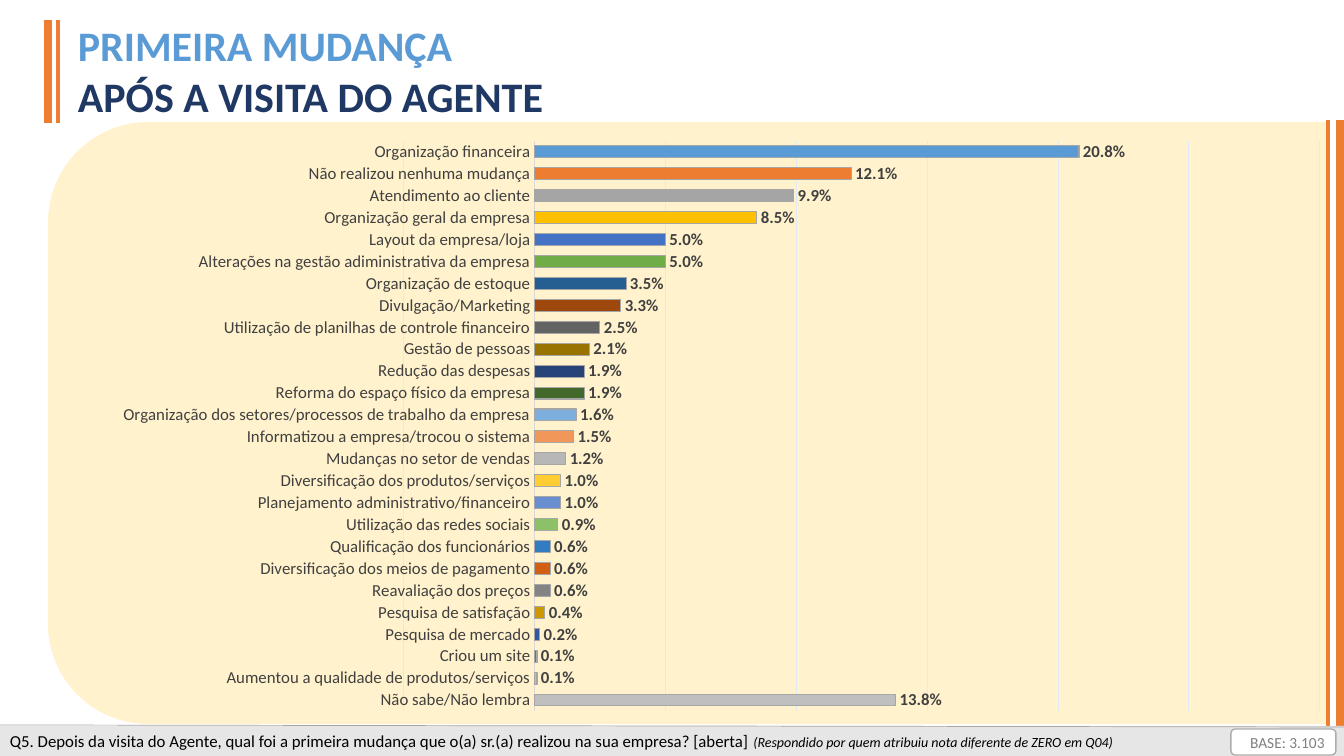
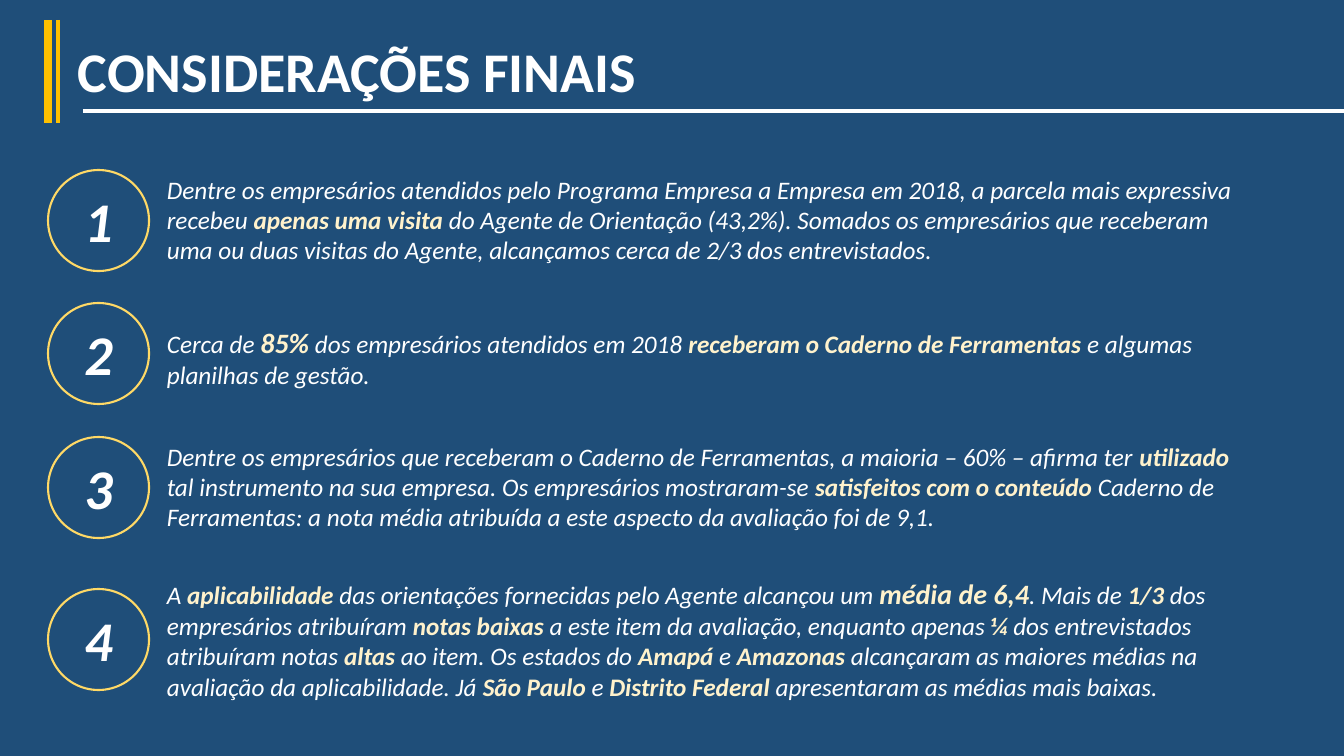
from lxml import etree
from pptx import Presentation, util as u
from pptx.chart.data import CategoryChartData
from pptx.dml.color import RGBColor
from pptx.enum import chart as ch, shapes, text
from pptx.oxml import parse_xml
from pptx.oxml.ns import nsdecls, qn

W, H = 1344, 756
PX = 12192000 / W
FONT = "Calibri"
C = {
    "white": "FFFFFF", "black": "000000", "orange": "ED7D31", "gold": "FFC000",
    "blue": "5B9BD5", "navy": "203864", "deep": "1F4E79", "cream": "FFF2CC",
    "ring": "FFD966", "bar_line": "A6A6A6", "footer": "E7E6E6", "base_line": "AFABAB",
    "base_text": "808080", "chart_text": "404040", "axis": "D9D9D9", "grid": "DEEBF7",
}
C = {name: RGBColor.from_string(value) for name, value in C.items()}


def line(s, x1, y1, x2, y2, color, width):
    cn = s.shapes.add_connector(shapes.MSO_CONNECTOR.STRAIGHT,
                                *(int(v * PX) for v in (x1, y1, x2, y2)))
    cn.line.color.rgb = C[color]
    cn.line.width = u.Pt(width)
    etree.SubElement(cn._element.spPr, qn("a:effectLst"))


def box(s, kind, frame, fill=None, outline=None, width=1):
    """Add a preset shape, or a text box when kind is None."""
    frame = [int(v * PX) for v in frame]
    if kind is None:
        sp = s.shapes.add_textbox(*frame)
    else:
        sp = s.shapes.add_shape(kind, *frame)
        sp.shadow.inherit = False
    if fill:
        sp.fill.solid()
        sp.fill.fore_color.rgb = C[fill]
    else:
        sp.fill.background()
    if outline:
        sp.line.color.rgb = C[outline]
        sp.line.width = u.Pt(width)
    else:
        sp.line.fill.background()
    sp.text_frame.word_wrap = True
    return sp


prs = Presentation()
prs.slide_width, prs.slide_height = int(W * PX), int(H * PX)

# Shared: background, twin accent bars and title
headers = [
    ("white", "orange", (68, 15, 900, 112), 30,
     [("PRIMEIRA MUDANÇA", "blue"), ("APÓS A VISITA DO AGENTE", "navy")]),
    ("deep", "gold", (68, 32, 860, 78), 40, [("CONSIDERAÇÕES FINAIS", "white")]),
]
for bg, accent, frame, size, title in headers:
    s = prs.slides.add_slide(prs.slide_layouts[6])
    s.background.fill.solid()
    s.background.fill.fore_color.rgb = C[bg]
    for x, width in ((48, 6), (58, 3)):
        line(s, x, 20, x, 123, accent, width)
    tf = box(s, None, frame).text_frame
    for i, (words, color) in enumerate(title):
        p = tf.add_paragraph() if i else tf.paragraphs[0]
        p.text = words
        p.font.name, p.font.size, p.font.bold = FONT, u.Pt(size), True
        p.font.color.rgb = C[color]
chart_slide, closing_slide = prs.slides

# Slide 1: panel and chart
s = chart_slide
panel = box(s, shapes.MSO_SHAPE.ROUND_2_SAME_RECTANGLE, (387, -217, 602, 1280), "cream")
panel.rotation = 270

answers = [
    ("Organização financeira", 0.208, "5B9BD5"),
    ("Não realizou nenhuma mudança", 0.121, "ED7D31"),
    ("Atendimento ao cliente", 0.099, "A5A5A5"),
    ("Organização geral da empresa", 0.085, "FFC000"),
    ("Layout da empresa/loja", 0.05, "4472C4"),
    ("Alterações na gestão adiministrativa da empresa", 0.05, "70AD47"),
    ("Organização de estoque", 0.035, "255E91"),
    ("Divulgação/Marketing", 0.033, "9E480E"),
    ("Utilização de planilhas de controle financeiro", 0.025, "636363"),
    ("Gestão de pessoas", 0.021, "997300"),
    ("Redução das despesas", 0.019, "264478"),
    ("Reforma do espaço físico da empresa", 0.019, "43682B"),
    ("Organização dos setores/processos de trabalho da empresa", 0.016, "7CAFDD"),
    ("Informatizou a empresa/trocou o sistema", 0.015, "F1975A"),
    ("Mudanças no setor de vendas", 0.012, "B7B7B7"),
    ("Diversificação dos produtos/serviços", 0.01, "FFCD33"),
    ("Planejamento administrativo/financeiro", 0.01, "698ED0"),
    ("Utilização das redes sociais", 0.009, "8CC168"),
    ("Qualificação dos funcionários", 0.006, "327DC2"),
    ("Diversificação dos meios de pagamento", 0.006, "D26012"),
    ("Reavaliação dos preços", 0.006, "848484"),
    ("Pesquisa de satisfação", 0.004, "CC9A00"),
    ("Pesquisa de mercado", 0.002, "335AA1"),
    ("Criou um site", 0.001, "5A8A39"),
    ("Aumentou a qualidade de produtos/serviços", 0.001, "9DC3E6"),
    ("Não sabe/Não lembra", 0.138, "BFBFBF"),
]
data = CategoryChartData(number_format="0.0%")
data.categories = [label for label, _, _ in answers]
data.add_series("Series 1", [value for _, value, _ in answers])
chart = s.shapes.add_chart(ch.XL_CHART_TYPE.BAR_CLUSTERED,
                           *(int(v * PX) for v in (98, 129, 1247, 594)), data).chart
chart.has_legend = chart.has_title = False
chart.font.name, chart.font.size = FONT, u.Pt(12)
chart.font.color.rgb = C["chart_text"]

cat = chart.category_axis
cat.reverse_order = True
cat.major_tick_mark = ch.XL_TICK_MARK.NONE
cat.format.line.color.rgb = C["axis"]
cat.format.line.width = u.Pt(0.75)
val = chart.value_axis
val.minimum_scale, val.maximum_scale, val.major_unit = -0.05, 0.3, 0.05
val.visible = False
val.has_major_gridlines = True
val.major_gridlines.format.line.color.rgb = C["grid"]
val.major_gridlines.format.line.width = u.Pt(0.75)

plot = chart.plots[0]
plot.gap_width = 84
plot.vary_by_categories = False
plot.has_data_labels = True
labels = plot.data_labels
labels.show_value = True
labels.number_format, labels.number_format_is_linked = "0.0%", False
labels.position = ch.XL_LABEL_POSITION.OUTSIDE_END
labels.font.name, labels.font.size, labels.font.bold = FONT, u.Pt(12), True
labels.font.color.rgb = C["chart_text"]
for i, (_, _, color) in enumerate(answers):
    bar = plot.series[0].points[i].format
    bar.fill.solid()
    bar.fill.fore_color.rgb = RGBColor.from_string(color)
    bar.line.color.rgb = C["bar_line"]
    bar.line.width = u.Pt(0.75)

# Fixed inner plot area: category names run over its negative part
area = chart._chartSpace.chart.plotArea
for old in area.findall(qn("c:layout")):
    area.remove(old)
area.insert(0, parse_xml(
    f'<c:layout {nsdecls("c")}><c:manualLayout><c:layoutTarget val="inner"/>'
    '<c:xMode val="edge"/><c:yMode val="edge"/><c:x val="0.245"/><c:y val="0.02"/>'
    '<c:w val="0.735"/><c:h val="0.96"/></c:manualLayout></c:layout>'))

# Slide 1: right-hand bars, question footer and base
for x, width in ((1340, 6), (1328, 3)):
    line(s, x, 120, x, 728, "orange", width)
p = box(s, None, (0, 726, W, 30), "footer").text_frame.paragraphs[0]
p.font.name = FONT
p.font.color.rgb = C["black"]
for words, size, italic in (
        ("Q5. Depois da visita do Agente, qual foi a primeira mudança que o(a) sr.(a) "
         "realizou na sua empresa? [aberta] ", 12, False),
        ("(Respondido por quem atribuiu nota diferente de ZERO em Q04)", 10, True)):
    r = p.add_run()
    r.text = words
    r.font.size, r.font.italic = u.Pt(size), italic
line(s, 0, 725, W, 727, "bar_line", 0.5)
tf = box(s, shapes.MSO_SHAPE.ROUNDED_RECTANGLE, (1231, 729, 105, 26),
         "white", "base_line").text_frame
tf.vertical_anchor = text.MSO_ANCHOR.MIDDLE
p = tf.paragraphs[0]
p.text = "BASE: 3.103"
p.alignment = text.PP_ALIGN.RIGHT
p.font.name, p.font.size = FONT, u.Pt(11)
p.font.color.rgb = C["base_text"]

# Slide 2: numbered remarks, with emphasis between asterisks
s = closing_slide
line(s, 83, 111, W, 111, "white", 3)
larger = ("85%", "média de 6,4")
remarks = [
    (170, 169, 102,
     "Dentre os empresários atendidos pelo Programa Empresa a Empresa em 2018, a parcela "
     "mais expressiva recebeu *apenas uma visita* do Agente de Orientação (43,2%). Somados "
     "os empresários que receberam uma ou duas visitas do Agente, alcançamos cerca de 2/3 "
     "dos entrevistados."),
    (303, 321, 75,
     "Cerca de *85%* dos empresários atendidos em 2018 *receberam o Caderno de "
     "Ferramentas *e algumas planilhas de gestão."),
    (437, 436, 102,
     "Dentre os empresários que receberam o Caderno de Ferramentas, a maioria – 60% – "
     "afirma ter *utilizado* tal instrumento na sua empresa. Os empresários mostraram-se "
     "*satisfeitos com o conteúdo *Caderno de Ferramentas: a nota média atribuída a este "
     "aspecto da avaliação foi de 9,1."),
    (589, 572, 136,
     "A *aplicabilidade* das orientações fornecidas pelo Agente alcançou um *média de "
     "6,4*. Mais de *1/3* dos empresários atribuíram *notas baixas *a este item da "
     "avaliação, enquanto apenas *¼* dos entrevistados atribuíram notas *altas* ao item. "
     "Os estados do *Amapá* e *Amazonas* alcançaram as maiores médias na avaliação da "
     "aplicabilidade. Já *São Paulo *e *Distrito Federal *apresentaram as médias mais "
     "baixas."),
]
for number, (ring_y, text_y, text_h, remark) in enumerate(remarks, 1):
    tf = box(s, shapes.MSO_SHAPE.OVAL, (48, ring_y, 101, 101), None, "ring", 1.5).text_frame
    tf.vertical_anchor = text.MSO_ANCHOR.MIDDLE
    p = tf.paragraphs[0]
    p.text = str(number)
    p.alignment = text.PP_ALIGN.CENTER
    p.font.name, p.font.size = FONT, u.Pt(40)
    p.font.bold = p.font.italic = True
    p.font.color.rgb = C["white"]

    p = box(s, None, (157, text_y, 1100, text_h)).text_frame.paragraphs[0]
    p.font.name, p.font.size, p.font.italic = FONT, u.Pt(18), True
    p.font.color.rgb = C["white"]
    for i, words in enumerate(remark.split("*")):
        r = p.add_run()
        r.text = words
        if i % 2:
            r.font.bold = True
            r.font.color.rgb = C["cream"]
        if words in larger:
            r.font.size = u.Pt(20)

prs.save("out.pptx")
